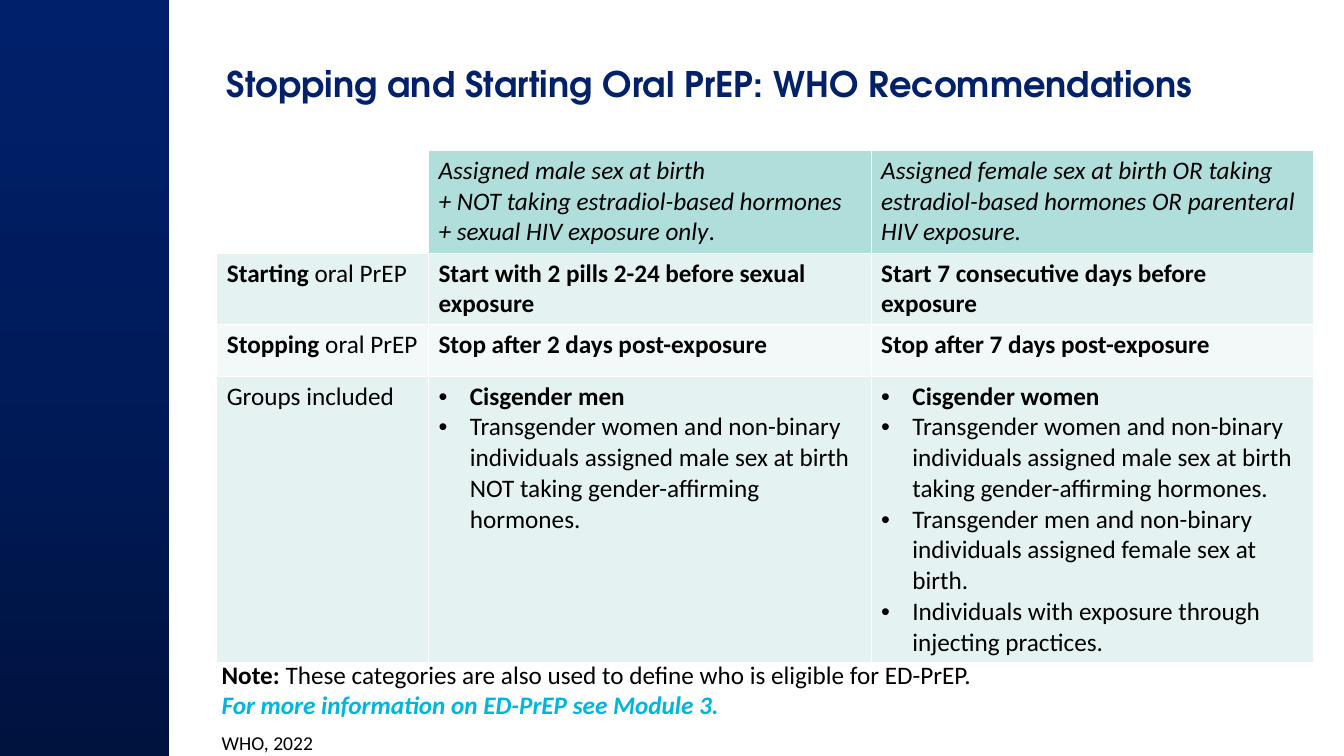
import copy

import pptx
import pptx.dml.color
import pptx.enum.shapes
import pptx.enum.text
import pptx.oxml
import pptx.oxml.ns
import pptx.util

RGBColor = pptx.dml.color.RGBColor
Inches = pptx.util.Inches
Pt = pptx.util.Pt

NAVY = RGBColor(0x02, 0x21, 0x69)
CYAN = RGBColor(0x00, 0xB5, 0xDE)
BLACK = RGBColor(0x00, 0x00, 0x00)
WHITE = RGBColor(0xFF, 0xFF, 0xFF)
TEAL = RGBColor(0xB0, 0xDF, 0xDB)
BAND_DARK = RGBColor(0xE4, 0xF3, 0xF1)
BAND_LIGHT = RGBColor(0xF2, 0xF9, 0xF8)
SIDEBAR_STOPS = [
    (0, RGBColor(0x00, 0x13, 0x3F)),
    (0.5, RGBColor(0x00, 0x1B, 0x5A)),
    (1, RGBColor(0x00, 0x20, 0x6B)),
]

BODY = {"name": "Calibri", "size": Pt(18), "bold": False, "italic": False}
BOLD = {"bold": True}
ITALIC = {"italic": True}

COLUMNS = [2.1, 4.39, 4.39]
ROWS = [1.02, 0.7, 0.51, 2.84]
ROW_FILLS = [TEAL, BAND_DARK, BAND_LIGHT, BAND_DARK]

# Each cell is a list of paragraphs, each paragraph a list of (text, format) runs.
CELLS = [
    [
        [],
        [
            [("Assigned male sex at birth", ITALIC)],
            [("+ NOT taking estradiol-based hormones", ITALIC)],
            [("+ sexual HIV exposure only", ITALIC), (".", {})],
        ],
        [[("Assigned female sex at birth OR taking estradiol-based hormones "
           "OR parenteral HIV exposure.", ITALIC)]],
    ],
    [
        [[("Starting", BOLD), (" oral PrEP", {})]],
        [[("Start with 2 pills 2-24 before sexual exposure", BOLD)]],
        [[("Start 7 consecutive days before exposure", BOLD)]],
    ],
    [
        [[("Stopping", BOLD), (" oral PrEP", {})]],
        [[("Stop after 2 days post-exposure", BOLD)]],
        [[("Stop after 7 days post-exposure", BOLD)]],
    ],
    [
        [[("Groups included", {})]],
        [
            [("Cisgender men", BOLD)],
            [("Transgender women and non-binary individuals assigned male sex "
              "at birth NOT taking gender-affirming hormones.", {})],
        ],
        [
            [("Cisgender women", BOLD)],
            [("Transgender women and non-binary individuals assigned male sex "
              "at birth taking gender-affirming hormones.", {})],
            [("Transgender men and non-binary individuals assigned female sex "
              "at birth.", {})],
            [("Individuals with exposure through injecting practices.", {})],
        ],
    ],
]

NOTE = [
    [("Note: ", BOLD),
     ("These categories are also used to define who is eligible for ED-PrEP.", {})],
    [("For more information on ED-PrEP see Module 3.",
      {"bold": True, "italic": True, "color": CYAN})],
]
SOURCE = [[("WHO, 2022", {"size": Pt(14)})]]


def format_font(font, values):
    for key, value in values.items():
        if key == "color":
            font.color.rgb = value
        else:
            setattr(font, key, value)


def add_bullet(p):
    pPr = p._p.get_or_add_pPr()
    pPr.set("marL", str(Inches(0.31)))
    pPr.set("indent", str(-Inches(0.31)))
    bullet = pptx.oxml.ns.nsdecls("a")
    pPr.append(pptx.oxml.parse_xml(f'<a:buFont {bullet} typeface="Arial"/>'))
    pPr.append(pptx.oxml.parse_xml(f'<a:buChar {bullet} char="•"/>'))


def write(tf, paragraphs, bulleted=False):
    for i, runs in enumerate(paragraphs):
        p = tf.add_paragraph() if i else tf.paragraphs[0]
        if bulleted:
            add_bullet(p)
        for text, values in runs:
            r = p.add_run()
            r.text = text
            format_font(r.font, {**BODY, "color": BLACK, **values})


def add_borders(cell):
    tcPr = cell._tc.get_or_add_tcPr()
    for i, side in enumerate(("lnL", "lnR", "lnT", "lnB")):
        tcPr.insert(i, pptx.oxml.parse_xml(
            f'<a:{side} {pptx.oxml.ns.nsdecls("a")} w="{Pt(0.75)}">'
            f'<a:solidFill><a:srgbClr val="{WHITE}"/></a:solidFill></a:{side}>'))


def add_sidebar(s, left, top, width, height):
    sp = s.shapes.add_shape(
        pptx.enum.shapes.MSO_SHAPE.RECTANGLE, left, top, width, height)
    sp.shadow.inherit = False
    sp.line.fill.background()
    sp.fill.gradient()
    sp.fill.gradient_angle = 90
    first = sp.fill.gradient_stops[0]._gs
    first.addnext(copy.deepcopy(first))
    for stop, (position, color) in zip(sp.fill.gradient_stops, SIDEBAR_STOPS):
        stop.position = position
        stop.color.rgb = color


def add_title(s, left, top, width, height):
    sp = s.shapes.title
    sp.left, sp.top, sp.width, sp.height = left, top, width, height
    tf = sp.text_frame
    tf.text = "Stopping and Starting Oral PrEP: WHO Recommendations"
    tf.word_wrap = True
    tf.vertical_anchor = pptx.enum.text.MSO_ANCHOR.TOP
    p = tf.paragraphs[0]
    p.alignment = pptx.enum.text.PP_ALIGN.LEFT
    format_font(p.runs[0].font, {"name": "TeX Gyre Adventor", "size": Pt(25.2),
                                 "bold": True, "color": NAVY})


def add_recommendations(s, left, top, width, height):
    """Share the box out among the table's columns and rows."""
    table = s.shapes.add_table(
        len(ROWS), len(COLUMNS), left, top, width, height).table
    table.first_row = table.horz_banding = False
    for column, share in zip(table.columns, COLUMNS):
        column.width = int(width * share / sum(COLUMNS))
    for row, share in zip(table.rows, ROWS):
        row.height = int(height * share / sum(ROWS))
    for i, row in enumerate(CELLS):
        for j, paragraphs in enumerate(row):
            cell = table.cell(i, j)
            cell.fill.solid()
            cell.fill.fore_color.rgb = ROW_FILLS[i] if paragraphs else WHITE
            add_borders(cell)
            write(cell.text_frame, paragraphs, bulleted=i == 3 and j > 0)


def add_text(s, paragraphs, left, top, width, height):
    tf = s.shapes.add_textbox(left, top, width, height).text_frame
    tf.word_wrap = True
    write(tf, paragraphs)


def main():
    prs = pptx.Presentation()
    prs.slide_width, prs.slide_height = Inches(13.33), Inches(7.5)
    s = prs.slides.add_slide(prs.slide_layouts[5])
    add_sidebar(s, 0, 0, Inches(1.68), prs.slide_height)
    add_title(s, Inches(2.15), Inches(0.57), Inches(10), Inches(0.92))
    add_recommendations(s, Inches(2.15), Inches(1.49),
                        Inches(sum(COLUMNS)), Inches(sum(ROWS)))
    add_text(s, SOURCE, Inches(2.1), Inches(7.2), Inches(2.28), Inches(0.34))
    add_text(s, NOTE, Inches(2.1), Inches(6.49), Inches(10.98), Inches(0.71))
    prs.save("out.pptx")


if __name__ == "__main__":
    main()
